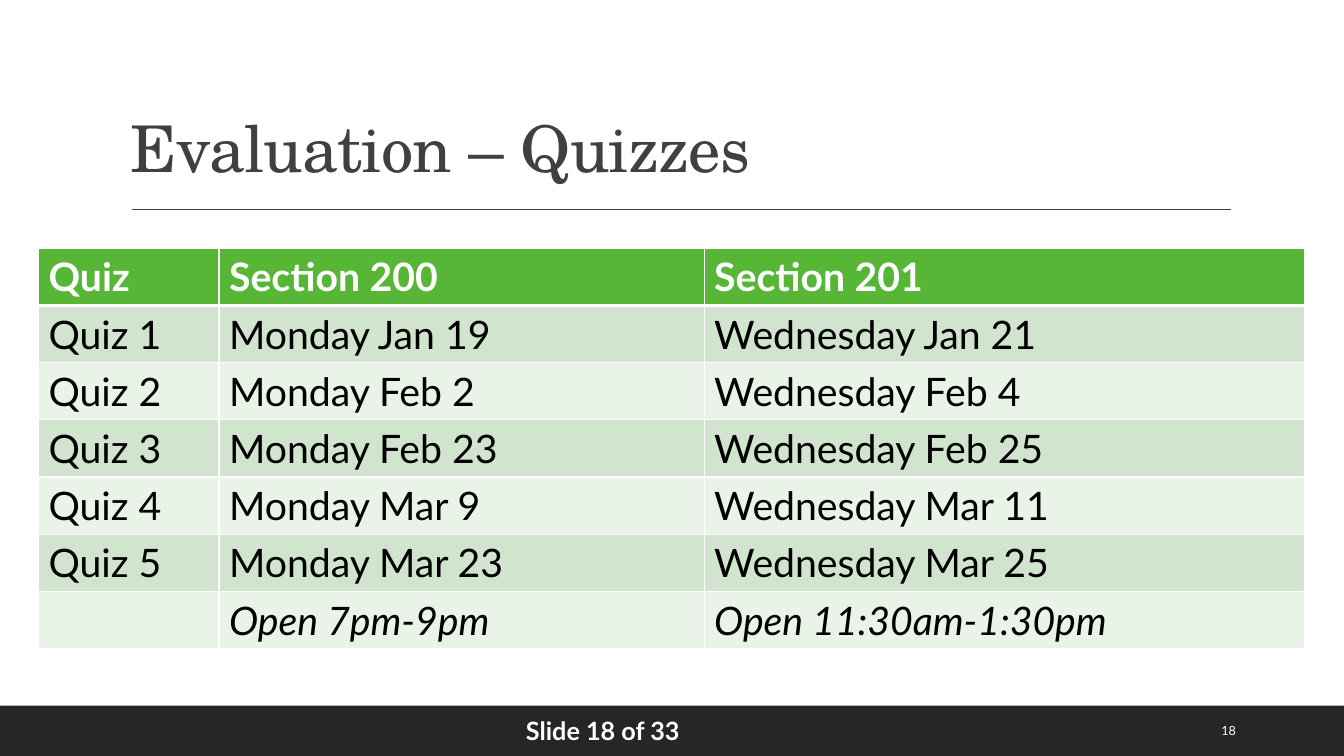
"""Builds the quiz schedule slide."""
from lxml import etree
from pptx import Presentation
from pptx.dml import color
from pptx.enum import shapes, text
from pptx.oxml import ns
from pptx.util import Pt

COLORS = {
    "white": "FFFFFF", "black": "000000", "bar": "262626", "gray": "404040",
    "head": "57B636", "odd": "D1E5CE", "even": "EAF3E8",
}
ROWS = [
    ("Quiz", "Section 200", "Section 201"),
    ("Quiz 1", "Monday Jan 19", "Wednesday Jan 21"),
    ("Quiz 2", "Monday Feb 2", "Wednesday Feb 4"),
    ("Quiz 3", "Monday Feb 23", "Wednesday Feb 25"),
    ("Quiz 4", "Monday Mar 9", "Wednesday Mar 11"),
    ("Quiz 5", "Monday Mar 23", "Wednesday Mar 25"),
    ("", "Open 7pm-9pm", "Open 11:30am-1:30pm"),
]


class Deck:
    def __init__(self):
        self.prs = Presentation()
        self.prs.slide_width, self.prs.slide_height = Pt(960), Pt(540)
        self.s = self.prs.slides.add_slide(self.prs.slide_layouts[6])
        self.body, self.heading = "Lato", "TeX Gyre Schola"

    def rgb(self, name):
        return color.RGBColor.from_string(COLORS[name])

    def style(self, p, size, col, font=None, bold=False, italic=False):
        for r in p.runs:
            f = r.font
            f.name, f.size, f.bold, f.italic = font or self.body, Pt(size), bold, italic
            f.color.rgb = self.rgb(col)

    def rect(self, x, y, w, h, col):
        sp = self.s.shapes.add_shape(shapes.MSO_SHAPE.RECTANGLE, Pt(x), Pt(y), Pt(w), Pt(h))
        sp.shadow.inherit = False
        sp.fill.solid()
        sp.fill.fore_color.rgb = self.rgb(col)
        sp.line.fill.background()

    def line(self, x1, y1, x2, y2, col):
        c = self.s.shapes.add_connector(
            shapes.MSO_CONNECTOR.STRAIGHT, Pt(x1), Pt(y1), Pt(x2), Pt(y2))
        c.line.color.rgb = self.rgb(col)
        c.line.width = Pt(1)
        etree.SubElement(c._element.spPr, ns.qn("a:effectLst"))

    def text(self, x, y, w, h, words, size, col, anchor="TOP", font=None, bold=False):
        tf = self.s.shapes.add_textbox(Pt(x), Pt(y), Pt(w), Pt(h)).text_frame
        tf.word_wrap = True
        tf.vertical_anchor = text.MSO_ANCHOR[anchor]
        tf.text = words
        p = tf.paragraphs[0]
        self.style(p, size, col, font, bold)
        return p

    def title(self, x, y, w, h, words):
        p = self.text(x, y, w, h, words, 46, "gray", "BOTTOM", self.heading)
        p.line_spacing = 0.9
        p.runs[0]._r.get_or_add_rPr().set("spc", "-50")

    def borders(self, cell, top, bottom):
        tcPr = cell._tc.get_or_add_tcPr()
        for side, width in zip("LRTB", (1, 1, top, bottom)):
            ln = etree.SubElement(tcPr, ns.qn(f"a:ln{side}"), w=str(Pt(width)))
            fill = etree.SubElement(ln, ns.qn("a:solidFill"))
            etree.SubElement(fill, ns.qn("a:srgbClr"), val=COLORS["white"])

    def table(self, x, y, widths, row_height, rows):
        t = self.s.shapes.add_table(
            len(rows), len(widths), Pt(x), Pt(y),
            Pt(sum(widths)), Pt(row_height * len(rows))).table
        t.first_row = t.horz_banding = False
        for column, width in zip(t.columns, widths):
            column.width = Pt(width)
        for i, row in enumerate(rows):
            t.rows[i].height = Pt(row_height)
            fill = "head" if i == 0 else "odd" if i % 2 else "even"
            for j, words in enumerate(row):
                cell = t.cell(i, j)
                self.borders(cell, 3 if i == 1 else 1, 3 if i == 0 else 1)
                cell.fill.solid()
                cell.fill.fore_color.rgb = self.rgb(fill)
                p = cell.text_frame.paragraphs[0]
                p.text = words
                self.style(p, 28, "white" if i == 0 else "black",
                           bold=i == 0, italic=i == len(rows) - 1)


def main():
    d = Deck()
    d.rect(0, 504, 960, 36, "bar")
    d.line(94.3, 149.5, 879, 149.5, "gray")
    d.text(368.6, 507.6, 188.6, 29, "Slide 18 of 33", 18, "white", bold=True)
    d.title(86.4, 22.5, 792, 114.5, "Evaluation – Quizzes")
    d.table(27.5, 177.3, (129, 346.5, 429), 40.8, ROWS)
    d.text(865.4, 507.6, 61, 29, "18", 9, "white", "MIDDLE")
    d.prs.save("out.pptx")


if __name__ == "__main__":
    main()
